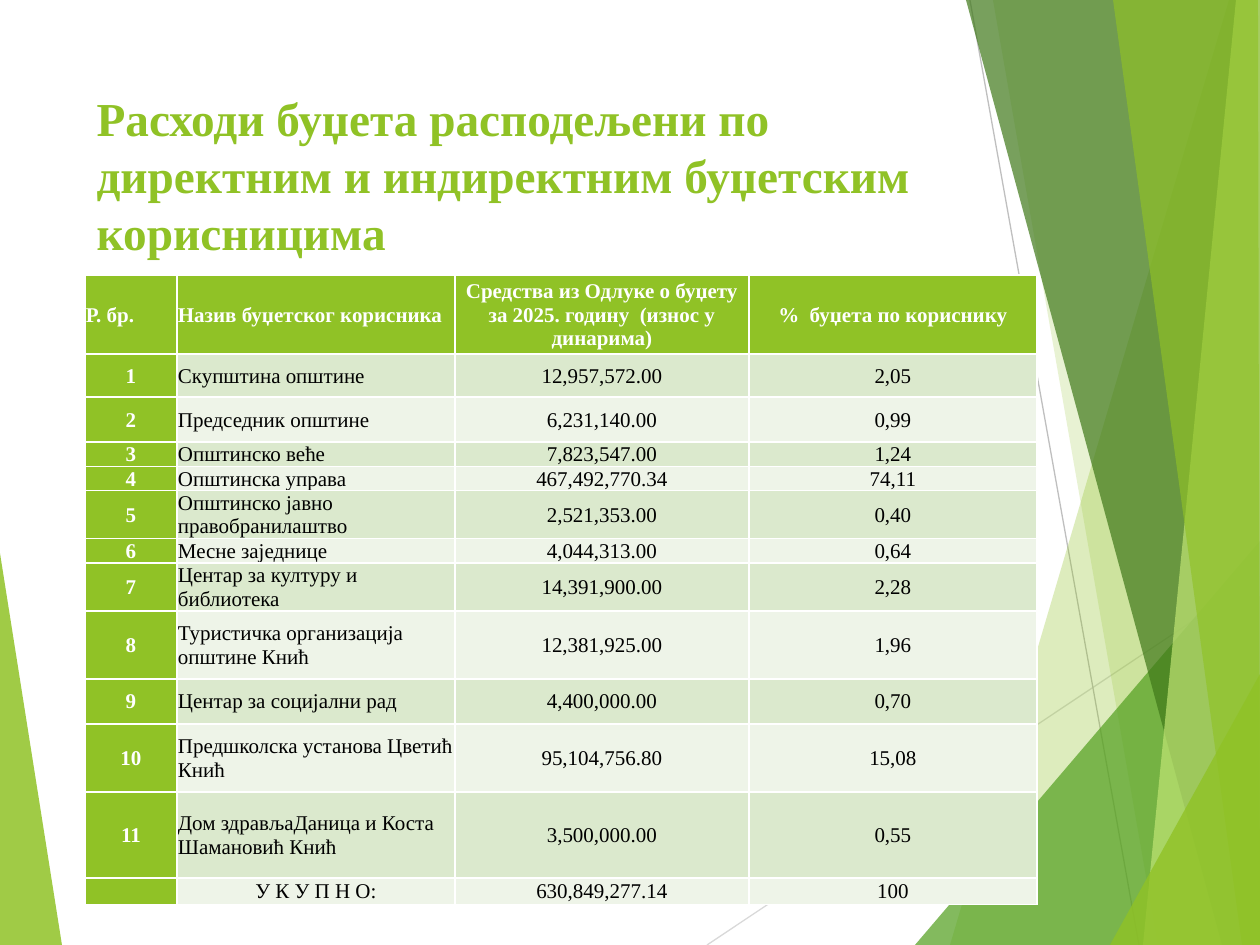
from lxml import etree
from pptx import Presentation
from pptx.dml.color import RGBColor
from pptx.enum.shapes import MSO_CONNECTOR
from pptx.enum.text import MSO_ANCHOR, MSO_AUTO_SIZE, PP_ALIGN
from pptx.oxml.ns import qn
from pptx.util import Emu, Pt

LEFT, CENTER = PP_ALIGN.LEFT, PP_ALIGN.CENTER
STRAIGHT = MSO_CONNECTOR.STRAIGHT
EMU_PER_PX = 914400 / 126
W, H = 1260, 945
FONT = "Times New Roman"
COLORS = {
    "green": "90C226", "leaf": "54A021", "forest": "3F7819", "lime": "C0E474",
    "band_dark": "DBE9CD", "band_light": "EEF4E8",
    "white": "FFFFFF", "black": "000000", "gray": "BFBFBF", "pale_gray": "D9D9D9",
}

TITLE = "Расходи буџета расподељени по директним и индиректним буџетским корисницима"
HEADER = ("Р. бр.", "Назив буџетског корисника",
          "Средства из Одлуке о буџету за 2025. годину  (износ у динарима)",
          "%  буџета по кориснику")
# name, amount, share, row height
BENEFICIARIES = [
    ("Скупштина општине", "12,957,572.00", "2,05", 43),
    ("Председник општине", "6,231,140.00", "0,99", 45),
    ("Општинско веће", "7,823,547.00", "1,24", 24),
    ("Општинска управа", "467,492,770.34", "74,11", 24),
    ("Општинско јавно правобранилаштво", "2,521,353.00", "0,40", 48),
    ("Месне заједнице", "4,044,313.00", "0,64", 24),
    ("Центар за културу и библиотека", "14,391,900.00", "2,28", 48),
    ("Туристичка организација општине Кнић", "12,381,925.00", "1,96", 68),
    ("Центар за социјални рад", "4,400,000.00", "0,70", 45),
    ("Предшколска установа Цветић Кнић", "95,104,756.80", "15,08", 68),
    ("Дом здрављаДаница и Коста Шамановић Кнић", "3,500,000.00", "0,55", 86),
]
TOTAL = ("", "У К У П Н О:", "630,849,277.14", "100")
HEADER_H, TOTAL_H = 79, 24
COL_WIDTHS = (92, 278, 294, 288)
TABLE_LEFT, TABLE_TOP = 85, 275

# fill, opacity in percent, corners
LEFT_WEDGE = ("green", 85, [(0, 553), (62, H), (0, H)])
RIGHT_FACETS = [
    ("green", 30, [(1229, 0), (950, H), (W, H), (W, 0)]),
    ("green", 20, [(993, 0), (1158, H), (W, H), (W, 0)]),
    ("leaf", 72, [(915, H), (W, 541), (W, H)]),
    ("forest", 70, [(966, 0), (1222, H), (W, H), (W, 0)]),
    ("lime", 70, [(1236, 0), (1143, H), (W, H), (W, 0)]),
    ("green", 65, [(1113, 0), (1242, H), (W, H), (1258, 0)]),
    ("green", 80, [(1110, H), (W, 674), (W, H)]),
]
# color, start, end
RAYS = [("pale_gray", (707, H), (W, 576)), ("gray", (970, 0), (1139, H))]


def px(n):
    return Emu(round(n * EMU_PER_PX))


def rgb(name):
    return RGBColor.from_string(COLORS[name])


def add_facet(shapes, color, opacity, corners):
    builder = shapes.build_freeform(*corners[0], scale=EMU_PER_PX)
    builder.add_line_segments(corners[1:], close=True)
    sp = builder.convert_to_shape()
    sp.shadow.inherit = False
    sp.line.fill.background()
    sp.fill.solid()
    sp.fill.fore_color.rgb = rgb(color)
    clr = sp.fill._xPr.find(".//" + qn("a:srgbClr"))
    etree.SubElement(clr, qn("a:alpha")).set("val", str(opacity * 1000))


def add_ray(shapes, color, start, end):
    line = shapes.add_connector(STRAIGHT, *map(px, start + end))
    line.line.color.rgb = rgb(color)
    line.line.width = Pt(0.75)
    etree.SubElement(line._element.spPr, qn("a:effectLst"))


def add_run(p, text, size, color, bold):
    r = p.add_run()
    r.text = text
    r.font.name = FONT
    r.font.size = Pt(size)
    r.font.bold = bold
    r.font.color.rgb = rgb(color)


def fill_cell(cell, text, fill, color, bold, align):
    cell.fill.solid()
    cell.fill.fore_color.rgb = rgb(fill)
    cell.vertical_anchor = MSO_ANCHOR.MIDDLE
    cell.margin_left = cell.margin_right = cell.margin_top = px(1)
    cell.margin_bottom = 0
    p = cell.text_frame.paragraphs[0]
    p.alignment = align
    if text:
        add_run(p, text, 12, color, bold)
    else:  # keeps the empty cell from stretching its row
        etree.SubElement(p._p, qn("a:endParaRPr")).set("sz", "1200")


def add_budget_table(shapes):
    rows = [HEADER]
    rows += [(str(i), *b[:3]) for i, b in enumerate(BENEFICIARIES, 1)]
    rows.append(TOTAL)
    heights = [HEADER_H, *(b[3] for b in BENEFICIARIES), TOTAL_H]
    table = shapes.add_table(len(rows), len(COL_WIDTHS), px(TABLE_LEFT), px(TABLE_TOP),
                             px(sum(COL_WIDTHS)), px(sum(heights))).table
    table.first_col = True
    for col, width in zip(table.columns, COL_WIDTHS):
        col.width = px(width)
    for i, (values, height) in enumerate(zip(rows, heights)):
        table.rows[i].height = px(height)
        for j, text in enumerate(values):
            strong = i == 0 or j == 0
            band = "band_dark" if i % 2 else "band_light"
            is_left = (i == 0 and j < 2) or (j == 1 and values is not TOTAL)
            fill_cell(table.cell(i, j), text, "green" if strong else band,
                      "white" if strong else "black", strong,
                      LEFT if is_left else CENTER)


prs = Presentation()
prs.slide_width, prs.slide_height = px(W), px(H)
slide = prs.slides.add_slide(prs.slide_layouts[5])
shapes = slide.shapes

add_facet(shapes, *LEFT_WEDGE)
for ray in RAYS:
    add_ray(shapes, *ray)
for facet in RIGHT_FACETS:
    add_facet(shapes, *facet)

title = shapes.title
shapes._spTree.append(title._element)  # in front of the facets
title.left, title.top, title.width, title.height = map(px, (84, 84, 875, 182))
tf = title.text_frame
tf.word_wrap = True
tf.auto_size = MSO_AUTO_SIZE.NONE
tf.vertical_anchor = MSO_ANCHOR.BOTTOM
tf.paragraphs[0].alignment = LEFT
add_run(tf.paragraphs[0], TITLE, 27, "green", True)

add_budget_table(shapes)
prs.save("out.pptx")
